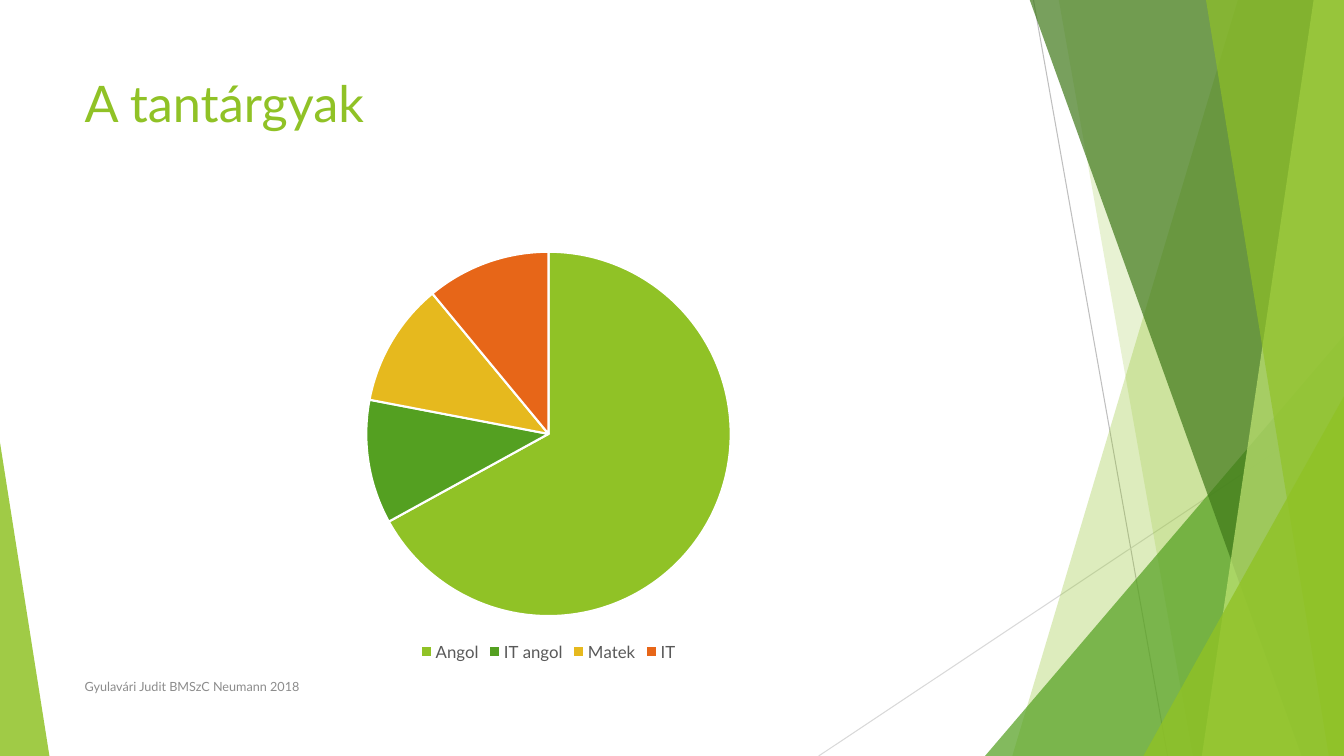
from lxml.etree import SubElement
from pptx import Presentation
from pptx.chart.data import CategoryChartData
from pptx.dml.color import RGBColor
from pptx.enum.chart import XL_CHART_TYPE as ChartType, XL_LEGEND_POSITION as LegendPosition
from pptx.enum.shapes import MSO_CONNECTOR as Connector, MSO_SHAPE as Shape
from pptx.enum.text import MSO_ANCHOR as Anchor
from pptx.oxml.ns import qn
from pptx.util import Inches, Pt

WIDTH, HEIGHT = 13.33, 7.5
BAND_TOP = -0.01
LIME, GREEN, FOREST, PALE = "90C226", "54A021", "3F7819", "C0E474"
GOLD, ORANGE, WHITE = "E6B91E", "E76618", "FFFFFF"


def color(hex_code):
    return RGBColor.from_string(hex_code)


class FacetSlide:
    font_name = "Lato"

    def __init__(self, deck):
        self.shapes = deck.slides.add_slide(deck.slide_layouts[6]).shapes

    def style_font(self, font, size, hex_code):
        for name, value in {"name": self.font_name, "size": Pt(size)}.items():
            setattr(font, name, value)
        font.color.rgb = color(hex_code)

    def paint(self, shape, hex_code, opacity):
        """Give a shape a borderless fill with opacity in percent."""
        shape.shadow.inherit = False
        shape.fill.solid()
        shape.fill.fore_color.rgb = color(hex_code)
        shape.line.fill.background()
        srgb = shape.fill._xPr.find(".//" + qn("a:srgbClr"))
        SubElement(srgb, qn("a:alpha"), val=str(opacity * 1000))

    def line(self, start, end, hex_code):
        ray = self.shapes.add_connector(Connector.STRAIGHT, *map(Inches, start + end))
        ray.line.color.rgb = color(hex_code)
        ray.line.width = Pt(0.75)
        SubElement(ray._element.spPr, qn("a:effectLst"))

    def band(self, top_x, bottom_x, hex_code, opacity):
        """Fill from a slanted left side to the right edge of the slide."""
        corners = [(top_x, BAND_TOP), (WIDTH, BAND_TOP), (WIDTH, HEIGHT), (bottom_x, HEIGHT)]
        points = [(Inches(x), Inches(y)) for x, y in corners]
        outline = self.shapes.build_freeform(*points[0])
        outline.add_line_segments(points[1:])
        self.paint(outline.convert_to_shape(), hex_code, opacity)

    def triangle(self, left, top, width, apex, hex_code, opacity):
        """Stand a triangle on the bottom edge, apex at 0 (left) to 1 (right)."""
        box = map(Inches, (left, top, width, HEIGHT - top))
        wedge = self.shapes.add_shape(Shape.ISOSCELES_TRIANGLE, *box)
        wedge.adjustments[0] = apex
        self.paint(wedge, hex_code, opacity)

    def text(self, words, box, size, hex_code, anchor):
        frame = self.shapes.add_textbox(*map(Inches, box)).text_frame
        for name, value in {"word_wrap": True, "vertical_anchor": anchor}.items():
            setattr(frame, name, value)
        run = frame.paragraphs[0].add_run()
        run.text = words
        self.style_font(run.font, size, hex_code)

    def pie(self, box, slices):
        """Draw slices given as (label, value, colour)."""
        labels, values, hex_codes = zip(*slices)
        data = CategoryChartData()
        data.categories = labels
        data.add_series("Series 1", values)
        chart = self.shapes.add_chart(ChartType.PIE, *map(Inches, box), data).chart
        self.style_font(chart.font, 10, "000000")
        chart.has_title = False
        chart.has_legend = True
        legend_format = {"position": LegendPosition.BOTTOM, "include_in_layout": False}
        for name, value in legend_format.items():
            setattr(chart.legend, name, value)
        self.style_font(chart.legend.font, 12, "595959")
        plot = chart.plots[0]
        plot.vary_by_categories = True
        for index, hex_code in enumerate(hex_codes):
            look = plot.series[0].points[index].format
            look.fill.solid()
            look.fill.fore_color.rgb = color(hex_code)
            look.line.color.rgb = color(WHITE)
            look.line.width = Pt(1.5)


def main():
    deck = Presentation()
    deck.slide_width, deck.slide_height = Inches(WIDTH), Inches(HEIGHT)
    slide = FacetSlide(deck)

    slide.line((10.25, 0), (11.58, HEIGHT), "BFBFBF")
    slide.line((WIDTH, 4.03), (8.12, HEIGHT), "D9D9D9")
    slide.band(12.28, 10.04, LIME, 30)
    slide.band(10.5, 11.83, LIME, 20)
    slide.triangle(9.77, 3.33, 3.56, 1, GREEN, 72)
    slide.band(10.21, 12.91, FOREST, 70)
    slide.band(13.03, 11.92, PALE, 70)
    slide.band(11.96, 13.18, LIME, 65)
    slide.triangle(11.34, 3.93, 1.99, 1, LIME, 80)
    slide.triangle(0, 4.39, 0.49, 0, LIME, 85)

    slide.text("A tantárgyak", (0.74, 0.67, 9.4, 1.44), 36, LIME, Anchor.TOP)
    slide.text("Gyulavári Judit BMSzC Neumann 2018", (0.74, 6.61, 6.89, 0.4),
               9, "8C8C8C", Anchor.MIDDLE)
    slide.pie((0.74, 2.36, 9.4, 4.24), [
        ("Angol", 67, LIME),
        ("IT angol", 11, GREEN),
        ("Matek", 11, GOLD),
        ("IT", 11, ORANGE),
    ])
    deck.save("out.pptx")


if __name__ == "__main__":
    main()
